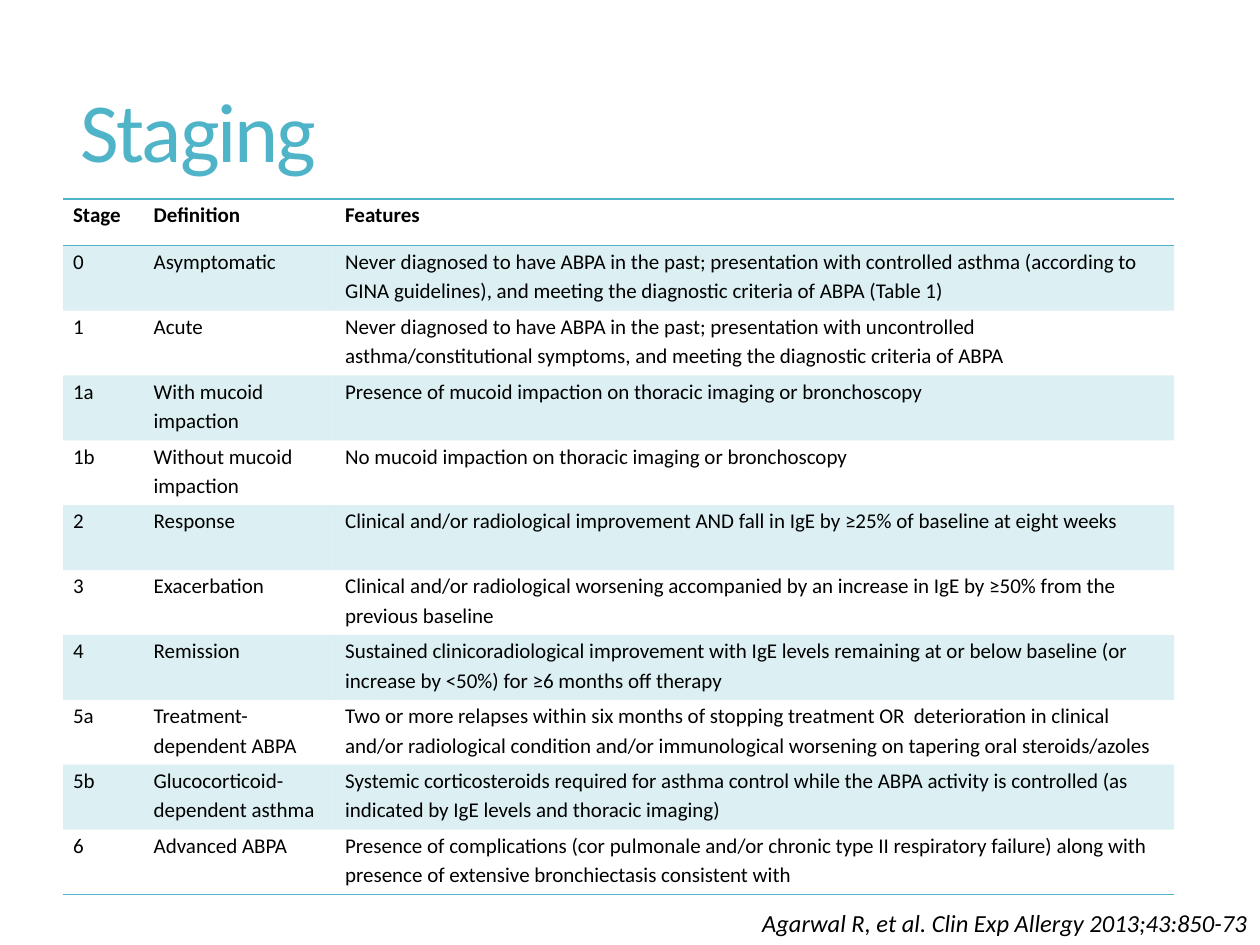
import lxml.etree
import pptx
import pptx.dml.color
import pptx.enum.text
import pptx.oxml
import pptx.oxml.ns
import pptx.util

Inches = pptx.util.Inches
Pt = pptx.util.Pt
qn = pptx.oxml.ns.qn

COLORS = {"accent": "50B4C8", "text": "000000"}
NO_GRID_STYLE = "{2D5ABB26-0587-4C30-8999-92F81FD0307C}"
COLUMN_WIDTHS = [0.64, 1.52, 6.66]
HEADER_HEIGHT = 0.37
STAGE_HEIGHT = 0.515

STAGES = [
    ("Stage", "Definition", "Features"),
    ("0", "Asymptomatic",
     "Never diagnosed to have ABPA in the past; presentation with controlled asthma "
     "(according to GINA guidelines), and meeting the diagnostic criteria of ABPA (Table 1)"),
    ("1", "Acute",
     "Never diagnosed to have ABPA in the past; presentation with uncontrolled "
     "asthma/constitutional symptoms, and meeting the diagnostic criteria of ABPA"),
    ("1a", "With mucoid impaction",
     "Presence of mucoid impaction on thoracic imaging or bronchoscopy"),
    ("1b", "Without mucoid impaction",
     "No mucoid impaction on thoracic imaging or bronchoscopy"),
    ("2", "Response",
     "Clinical and/or radiological improvement AND fall in IgE by ≥25% of baseline at eight weeks"),
    ("3", "Exacerbation",
     "Clinical and/or radiological worsening accompanied by an increase in IgE by ≥50% "
     "from the previous baseline"),
    ("4", "Remission",
     "Sustained clinicoradiological improvement with IgE levels remaining at or below baseline "
     "(or increase by <50%) for ≥6 months off therapy"),
    ("5a", "Treatment-dependent ABPA",
     "Two or more relapses within six months of stopping treatment OR  deterioration in clinical "
     "and/or radiological condition and/or immunological worsening on tapering oral steroids/azoles"),
    ("5b", "Glucocorticoid-dependent asthma",
     "Systemic corticosteroids required for asthma control while the ABPA activity is controlled "
     "(as indicated by IgE levels and thoracic imaging)"),
    ("6", "Advanced ABPA",
     "Presence of complications (cor pulmonale and/or chronic type II respiratory failure) along "
     "with presence of extensive bronchiectasis consistent with"),
]


class StagingSlide:
    font_name = "Calibri"

    def __init__(self, presentation):
        self.slide = presentation.slides.add_slide(presentation.slide_layouts[6])

    def style(self, paragraph, size, color="text", bold=False, italic=False):
        font = paragraph.font
        font.name = self.font_name
        font.size = Pt(size)
        font.bold = bold
        font.italic = italic
        font.color.rgb = pptx.dml.color.RGBColor.from_string(COLORS[color])

    def add_text(self, text, left, top, width, height, size, color="text", italic=False):
        shape = self.slide.shapes.add_textbox(
            Inches(left), Inches(top), Inches(width), Inches(height))
        shape.text_frame.word_wrap = True
        paragraph = shape.text_frame.paragraphs[0]
        paragraph.text = text
        self.style(paragraph, size, color, italic=italic)
        return shape.text_frame

    def add_title(self, text):
        frame = self.add_text(text, 0.54, 0.55, 8.84, 1.04, 48, "accent")
        frame.vertical_anchor = pptx.enum.text.MSO_ANCHOR.MIDDLE
        paragraph = frame.paragraphs[0]
        paragraph.line_spacing = 0.9
        paragraph.runs[0].font._element.set("spc", "-120")

    def add_citation(self, text):
        frame = self.add_text(text, 5.08, 7.16, 4.92, 0.34, 14, italic=True)
        frame.paragraphs[0].alignment = pptx.enum.text.PP_ALIGN.RIGHT

    def add_borders(self, cell, sides):
        properties = cell._tc.get_or_add_tcPr()
        for position, side in enumerate(sides):
            line = pptx.oxml.parse_xml(
                f'<a:{side} {pptx.oxml.ns.nsdecls("a")} w="{Pt(1)}"><a:solidFill>'
                f'<a:srgbClr val="{COLORS["accent"]}"/></a:solidFill></a:{side}>')
            properties.insert(position, line)

    def shade(self, cell, opacity):
        cell.fill.solid()
        cell.fill.fore_color.rgb = pptx.dml.color.RGBColor.from_string(COLORS["accent"])
        color = cell._tc.tcPr.find(".//" + qn("a:srgbClr"))
        lxml.etree.SubElement(color, qn("a:alpha")).set("val", str(opacity * 1000))

    def add_cell(self, cell, text, row, last_row):
        cell.text = text
        cell.margin_left = cell.margin_right = Inches(0.08)
        cell.margin_top = cell.margin_bottom = 0
        paragraph = cell.text_frame.paragraphs[0]
        paragraph.line_spacing = 1.15
        self.style(paragraph, 12, bold=row == 0)
        if row % 2:
            self.shade(cell, 20)
        else:
            cell.fill.background()
        if row == 0:
            self.add_borders(cell, ["lnT", "lnB"])
        elif row == last_row:
            self.add_borders(cell, ["lnB"])

    def add_table(self, rows, left, top):
        last_row = len(rows) - 1
        height = HEADER_HEIGHT + STAGE_HEIGHT * last_row
        shape = self.slide.shapes.add_table(
            len(rows), len(COLUMN_WIDTHS), Inches(left), Inches(top),
            Inches(sum(COLUMN_WIDTHS)), Inches(height))
        table = shape.table
        table.first_row = table.horz_banding = False
        table._tbl.tblPr.find(qn("a:tableStyleId")).text = NO_GRID_STYLE
        for column, width in zip(table.columns, COLUMN_WIDTHS):
            column.width = Inches(width)
        for row, texts in enumerate(rows):
            table.rows[row].height = Inches(STAGE_HEIGHT if row else HEADER_HEIGHT)
            for column, text in enumerate(texts):
                self.add_cell(table.cell(row, column), text, row, last_row)


def main():
    presentation = pptx.Presentation()
    presentation.slide_width = Inches(10)
    presentation.slide_height = Inches(7.5)
    staging = StagingSlide(presentation)
    staging.add_title("Staging")
    staging.add_table(STAGES, 0.5, 1.58)
    staging.add_citation("Agarwal R, et al. Clin Exp Allergy 2013;43:850-73")
    presentation.save("out.pptx")


if __name__ == "__main__":
    main()
